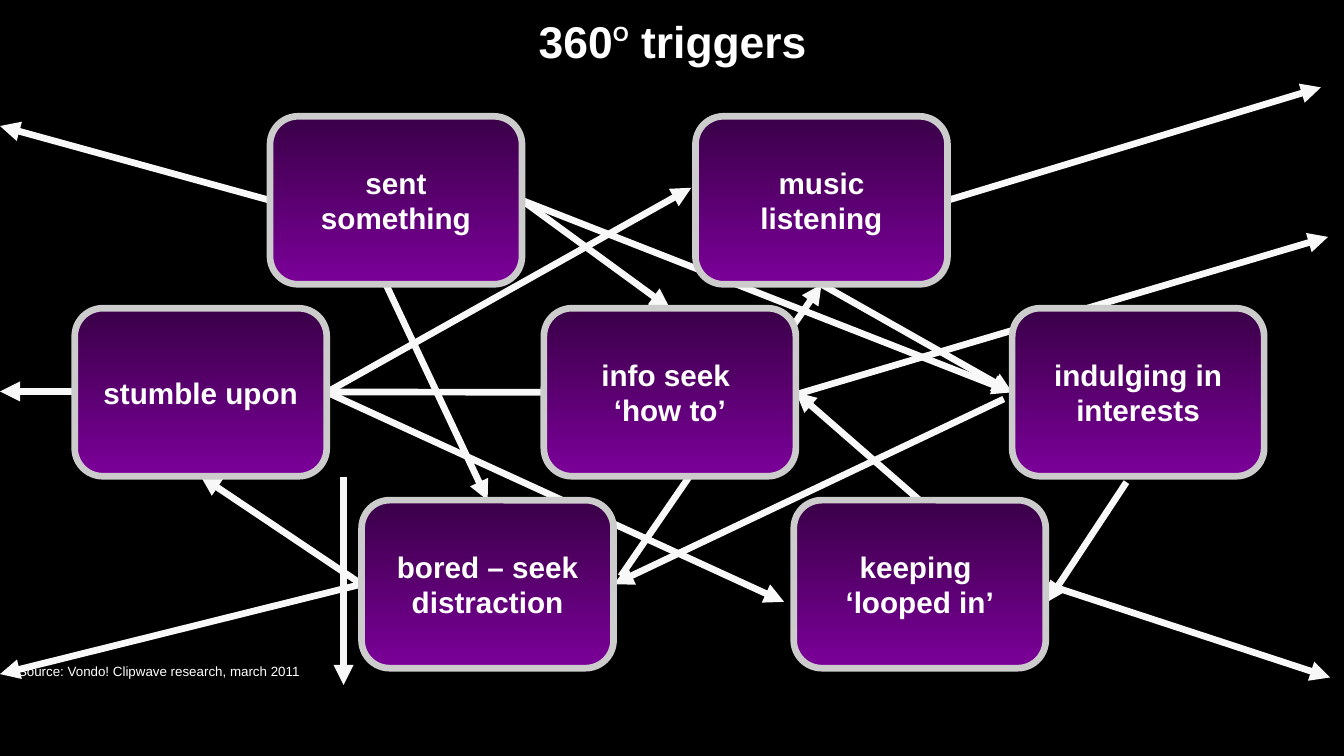
from lxml import etree
from pptx import Presentation
from pptx import util as u
from pptx.dml.color import RGBColor
from pptx.enum import shapes, text
from pptx.oxml.ns import qn

COLOURS = {"page": "000000", "text": "FFFFFF", "arrow": "F8F8F8",
           "edge": "CCCCCC", "box_top": "3A0048", "box_bottom": "7B0099"}
FONT = "Arial"
LINE_WIDTH = u.Pt(4.5)
TOP, LEFT, BOTTOM, RIGHT = range(4)

# Trigger boxes in cm: row number and left edge
BOX_WIDTH, BOX_HEIGHT = 6, 4
FIRST_ROW, ROW_PITCH = 2.77, 4.57
TRIGGERS = {
    "stumble": ("stumble upon", 1, 1.78),
    "info": ("info seek \v‘how to’", 1, 12.95),
    "bored": ("bored – seek distraction", 2, 8.61),
    "interests": ("indulging in interests", 1, 24.1),
    "looped": ("keeping \v‘looped in’", 2, 18.9),
    "sent": ("sent something", 0, 6.43),
    "music": ("music listening", 0, 16.56),
}

# Arrow ends: a (trigger, side) pair, or a free (x, y) point in cm
ARROWS = [
    ((18.59, 9.5), (31.62, 5.64)),
    (("music", RIGHT), (31.45, 2.08)),
    (("looped", RIGHT), (31.67, 16.13)),
    ((8.18, 11.35), (8.18, 16.31)),
    (("bored", LEFT), (0, 16.05)),
    (("sent", LEFT), (0, 3)),
    (("info", LEFT), (0, 9.32)),
    ((22.33, 12.29), ("info", RIGHT)),
    (("bored", LEFT), ("stumble", BOTTOM)),
    ((14.78, 13.72), ("music", BOTTOM)),
    (("music", BOTTOM), ("interests", LEFT)),
    (("stumble", RIGHT), (16.46, 4.47)),
    ((9.17, 6.73), ("bored", TOP)),
    (("stumble", RIGHT), (18.67, 14.33)),
    (("sent", RIGHT), ("interests", LEFT)),
    ((26.82, 11.48), (24.94, 14.33)),
    ((23.9, 9.5), ("bored", RIGHT)),
    (("sent", RIGHT), ("info", TOP)),
]


def colour(name):
    return RGBColor.from_string(COLOURS[name])


def style_span(span, size, bold):
    span.font.name = FONT
    span.font.size = u.Pt(size)
    span.font.bold = bold
    span.font.color.rgb = colour("text")


def add_title(page, left, top, width, height):
    title = page.shapes.title
    title.left, title.top = u.Cm(left), u.Cm(top)
    title.width, title.height = u.Cm(width), u.Cm(height)
    frame = title.text_frame
    frame.vertical_anchor = text.MSO_ANCHOR.MIDDLE
    frame.auto_size = text.MSO_AUTO_SIZE.NONE
    para = frame.paragraphs[0]
    para.alignment = text.PP_ALIGN.CENTER
    for words, size in (("360", 30), ("O", 24), (" triggers", 30)):
        span = para.add_run()
        span.text = words
        style_span(span, size, True)
    # Raise the degree sign
    para.runs[1].font._element.set("baseline", "50000")


def add_trigger(page, words, left, top):
    box = page.shapes.add_shape(
        shapes.MSO_SHAPE.ROUNDED_RECTANGLE,
        u.Cm(left), u.Cm(top), u.Cm(BOX_WIDTH), u.Cm(BOX_HEIGHT))
    box.shadow.inherit = False
    box.fill.gradient()
    box.fill.gradient_angle = 270
    for stop, name in zip(box.fill.gradient_stops, ("box_top", "box_bottom")):
        stop.color.rgb = colour(name)
    box.line.color.rgb = colour("edge")
    box.line.width = LINE_WIDTH
    frame = box.text_frame
    frame.word_wrap = True
    frame.vertical_anchor = text.MSO_ANCHOR.MIDDLE
    frame.text = words
    para = frame.paragraphs[0]
    para.alignment = text.PP_ALIGN.CENTER
    for span in para.runs:
        style_span(span, 20, True)
    return box


def add_arrow(page, boxes, start, end, layer):
    points = [(0, 0) if point[0] in boxes else point for point in (start, end)]
    (x1, y1), (x2, y2) = points
    arrow = page.shapes.add_connector(
        shapes.MSO_CONNECTOR.STRAIGHT, u.Cm(x1), u.Cm(y1), u.Cm(x2), u.Cm(y2))
    if start[0] in boxes:
        arrow.begin_connect(boxes[start[0]], start[1])
    if end[0] in boxes:
        arrow.end_connect(boxes[end[0]], end[1])
    arrow.line.color.rgb = colour("arrow")
    arrow.line.width = LINE_WIDTH
    # Arrowhead, no shadow, and a place behind the boxes
    properties = arrow._element.spPr
    etree.SubElement(properties.find(qn("a:ln")), qn("a:tailEnd"), type="triangle")
    etree.SubElement(properties, qn("a:effectLst"))
    page.shapes._spTree.insert(2 + layer, arrow._element)


def add_source(page, left, top, width, height):
    box = page.shapes.add_textbox(u.Cm(left), u.Cm(top), u.Cm(width), u.Cm(height))
    frame = box.text_frame
    frame.word_wrap = False
    frame.auto_size = text.MSO_AUTO_SIZE.SHAPE_TO_FIT_TEXT
    frame.text = "Source: Vondo! Clipwave research, march 2011"
    style_span(frame.paragraphs[0].runs[0], 9, False)


def add_network(page):
    boxes = {name: add_trigger(page, words, left, FIRST_ROW + row * ROW_PITCH)
             for name, (words, row, left) in TRIGGERS.items()}
    for layer, (start, end) in enumerate(ARROWS):
        add_arrow(page, boxes, start, end, layer)


def main():
    deck = Presentation()
    deck.slide_width, deck.slide_height = u.Cm(32), u.Cm(18)
    page = deck.slides.add_slide(deck.slide_layouts[5])
    page.background.fill.solid()
    page.background.fill.fore_color.rgb = colour("page")
    add_title(page, 0.23, 0.18, 31.57, 1.6)
    add_network(page)
    add_source(page, 0.18, 15.67, 7.37, 0.64)
    deck.save("out.pptx")


if __name__ == "__main__":
    main()
